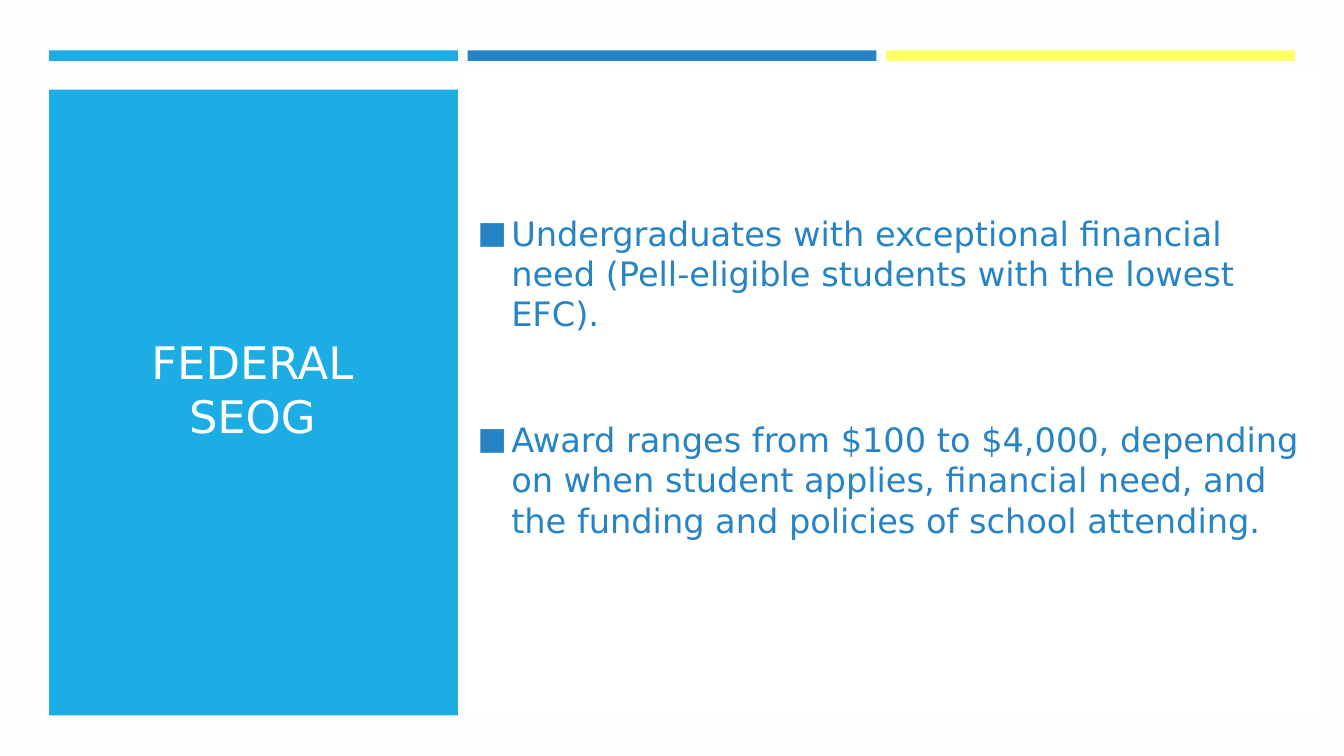
from dataclasses import dataclass
from lxml.etree import SubElement as Sub
from pptx import Presentation
from pptx.dml.color import RGBColor as Rgb
from pptx.enum.shapes import MSO_SHAPE as Kind
from pptx.enum.text import MSO_ANCHOR as Anchor, PP_ALIGN as Align
from pptx.oxml.ns import qn
from pptx.util import Pt


@dataclass(frozen=True)
class Theme:
    font: str = "DejaVu Sans"
    sky: str = "1CADE4"
    blue: str = "2683C6"
    yellow: str = "FFFF66"
    paper: str = "FFFEFF"
    white: str = "FFFFFF"
    title: int = 32
    body: int = 24


class Deck:
    def __init__(self, theme):
        self.theme = theme
        self.file = Presentation()
        self.file.slide_width = Pt(960)
        self.file.slide_height = Pt(540)
        self.slide = self.file.slides.add_slide(self.file.slide_layouts[6])

    def back(self, color):
        fill = self.slide.background.fill
        fill.solid()
        fill.fore_color.rgb = Rgb.from_string(color)

    def rect(self, color, *box):
        shape = self.slide.shapes.add_shape(Kind.RECTANGLE, *map(Pt, box))
        shape.shadow.inherit = False
        shape.fill.solid()
        shape.fill.fore_color.rgb = Rgb.from_string(color)
        shape.line.fill.background()

    def text(self, lines, size, color, *box, align=Align.LEFT, gap=0, low=3.6):
        frame = self.slide.shapes.add_textbox(*map(Pt, box)).text_frame
        frame.word_wrap = True
        frame.vertical_anchor = Anchor.MIDDLE
        frame.margin_bottom = Pt(low)
        frame.text = "\n".join(lines)
        for rank, para in enumerate(frame.paragraphs):
            para.alignment = align
            para.space_before = Pt(gap if rank else 0)
            para.font.name = self.theme.font
            para.font.size = Pt(size)
            para.font.color.rgb = Rgb.from_string(color)
        return frame

    def bullets(self, lines, size, color, *box, **opts):
        for para in self.text(lines, size, color, *box, **opts).paragraphs:
            props = para._p.get_or_add_pPr()
            props.set("marL", str(Pt(24)))
            props.set("indent", str(Pt(-24)))
            marks = [
                Sub(props, qn("a:buClr")),
                Sub(props, qn("a:buSzPct"), val="92000"),
                Sub(props, qn("a:buFont"), typeface=self.theme.font),
                Sub(props, qn("a:buChar"), char="■"),
            ]
            Sub(marks[0], qn("a:srgbClr"), val=color)
            last = props.find(qn("a:defRPr"))
            if last is not None:
                props.append(last)


def main():
    theme = Theme()
    deck = Deck(theme)
    deck.back(theme.sky)
    deck.rect(theme.paper, 0, 0, 960, 540)
    deck.rect(theme.white, 327, 48.2, 619.2, 462.3)
    deck.rect(theme.sky, 35, 64, 292, 447)
    for rank, color in enumerate((theme.sky, theme.blue, theme.yellow)):
        deck.rect(color, 35 + rank * 299, 36, 292, 7.5)
    deck.text(["FEDERAL SEOG"], theme.title, theme.white,
              54.7, 92.2, 251.3, 370.8, align=Align.CENTER)
    deck.bullets([
        "Undergraduates with exceptional financial need "
        "(Pell-eligible students with the lowest EFC).",
        "Award ranges from $100 to $4,000, depending on when student applies, "
        "financial need, and the funding and policies of school attending.",
    ], theme.body, theme.blue, 334.1, 68.4, 612.7, 442.1, gap=61, low=45)
    deck.file.save("out.pptx")


if __name__ == "__main__":
    main()
